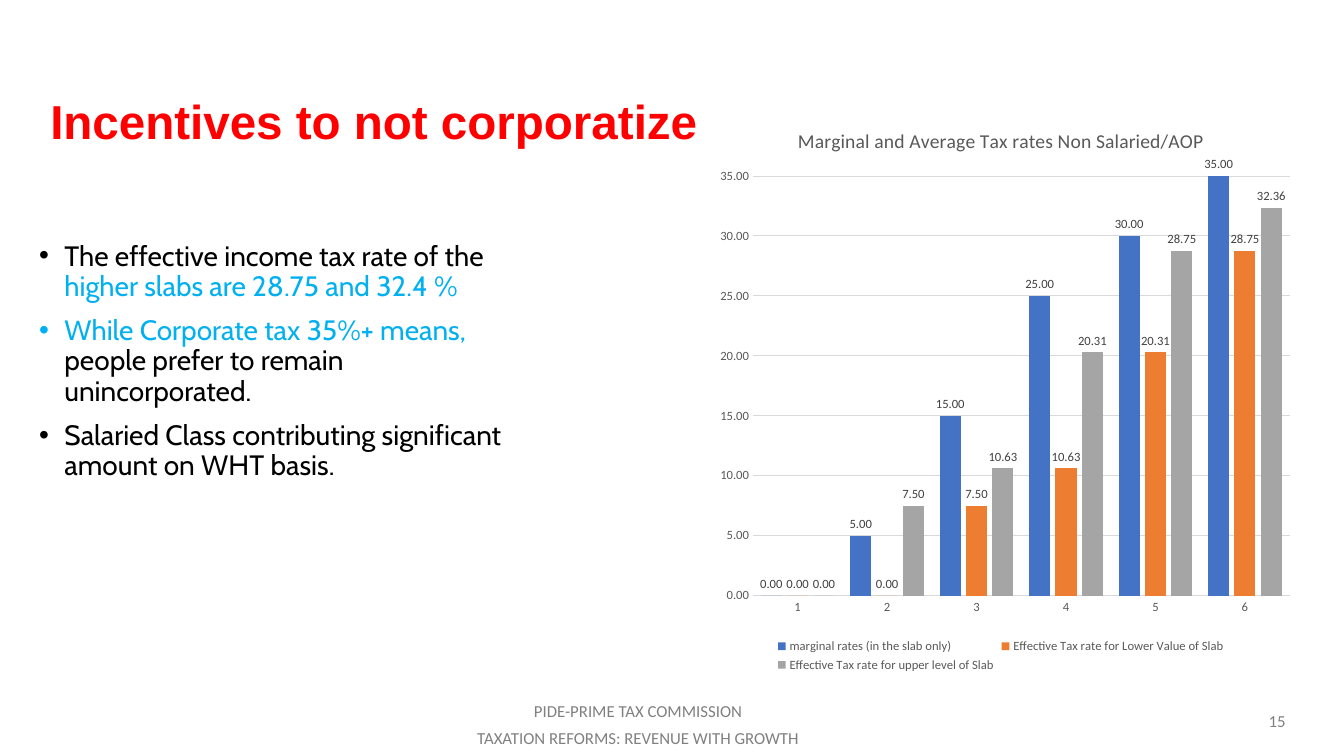
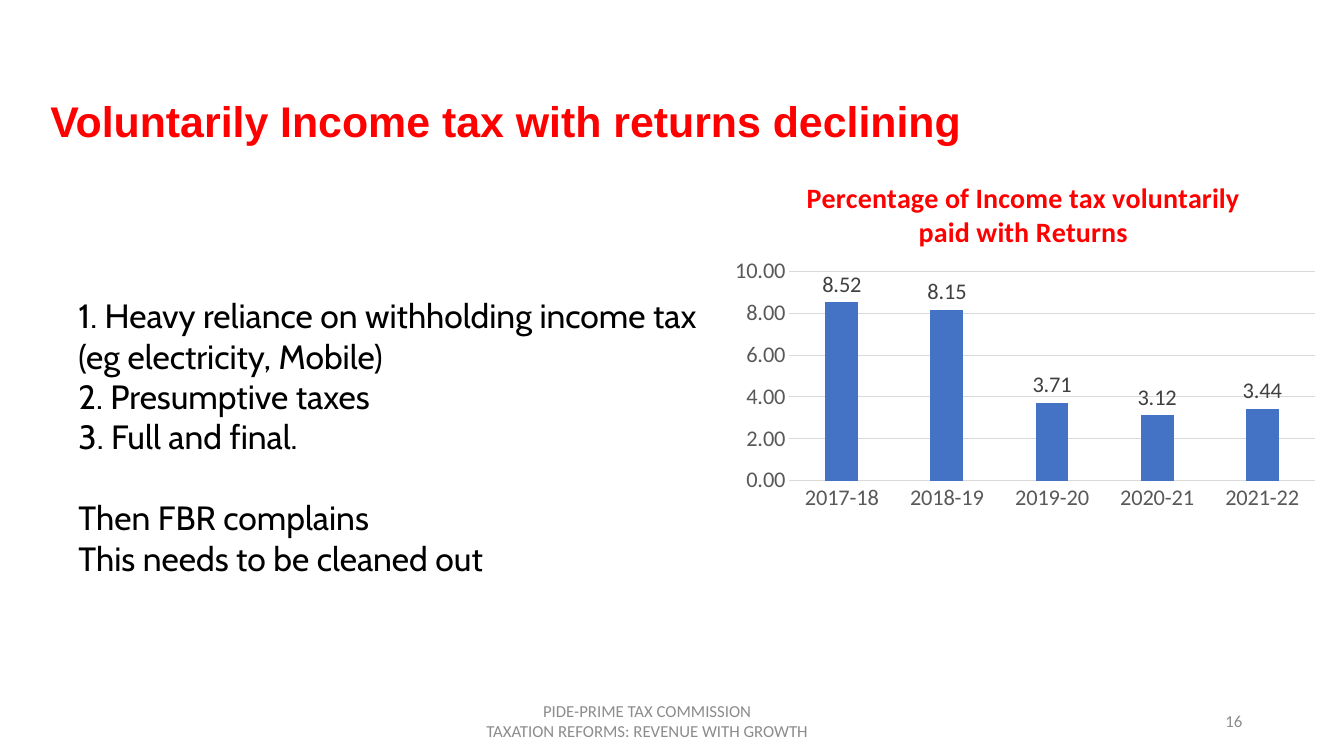
from dataclasses import dataclass
from typing import Any, Optional

from lxml import etree
from pptx import Presentation
from pptx.chart.data import CategoryChartData
from pptx.dml.color import RGBColor
from pptx.enum.chart import XL_CHART_TYPE, XL_LABEL_POSITION, XL_LEGEND_POSITION, XL_TICK_MARK
from pptx.enum.text import MSO_ANCHOR, PP_ALIGN
from pptx.oxml.ns import qn
from pptx.util import Inches, Pt

RED = RGBColor(0xFF, 0x00, 0x00)
BLACK = RGBColor(0x00, 0x00, 0x00)
SKY = RGBColor(0x00, 0xB0, 0xF0)
GREY = RGBColor(0x80, 0x80, 0x80)
LIGHT_GREY = RGBColor(0x8C, 0x8C, 0x8C)
AXIS_TEXT = RGBColor(0x59, 0x59, 0x59)
LABEL_TEXT = RGBColor(0x40, 0x40, 0x40)
GRID = RGBColor(0xD9, 0xD9, 0xD9)
BLUE = RGBColor(0x44, 0x72, 0xC4)
ORANGE = RGBColor(0xED, 0x7D, 0x31)
SILVER = RGBColor(0xA5, 0xA5, 0xA5)

TITLE_FONT, BODY_FONT, CHART_FONT = "Arial", "Cabin", "Calibri"
NUMBER_FORMAT = "0.00"
FOOTER = ("PIDE-PRIME TAX COMMISSION", "TAXATION REFORMS: REVENUE WITH GROWTH")

Box = tuple[float, float, float, float]


@dataclass(frozen=True)
class TextStyle:
    size: float
    color: RGBColor
    name: str
    bold: bool = False


@dataclass(frozen=True)
class Run:
    text: str
    color: Optional[RGBColor] = None


@dataclass(frozen=True)
class Series:
    name: str
    values: tuple[float, ...]
    color: RGBColor


@dataclass(frozen=True)
class ColumnChart:
    box: Box
    title: str
    title_style: TextStyle
    title_at: tuple[float, float]
    plot_area: Box
    categories: tuple[str, ...]
    series: tuple[Series, ...]
    text_size: int
    gap: int
    overlap: int
    top: float
    step: float
    legend: bool = False


def set_values(obj: Any, values: dict[str, Any]) -> None:
    for name, value in values.items():
        setattr(obj, name, value)


def style_font(font: Any, style: TextStyle) -> None:
    set_values(font, {"size": Pt(style.size), "name": style.name, "bold": style.bold})
    font.color.rgb = style.color


def add_text(s: Any, box: Box, paragraphs: list[tuple[Run, ...]], style: TextStyle,
             frame: Optional[dict[str, Any]] = None,
             para: Optional[dict[str, Any]] = None) -> list[Any]:
    """Add a wrapped text box and return its paragraphs."""
    tf = s.shapes.add_textbox(*map(Inches, box)).text_frame
    set_values(tf, {"word_wrap": True, **(frame or {})})
    for i, runs in enumerate(paragraphs):
        p = tf.add_paragraph() if i else tf.paragraphs[0]
        set_values(p, para or {})
        for run in runs:
            r = p.add_run()
            r.text = run.text
            style_font(r.font, style)
            if run.color is not None:
                r.font.color.rgb = run.color
    return list(tf.paragraphs)


def indent(p: Any, left: float, first: float = 0, bullet: str = "") -> None:
    pPr = p._p.get_or_add_pPr()
    pPr.set("marL", str(Inches(left)))
    pPr.set("indent", str(Inches(first)))
    if bullet:
        etree.SubElement(pPr, qn("a:buFont"), typeface="Arial")
        etree.SubElement(pPr, qn("a:buChar"), char=bullet)


def add_title(s: Any, text: str, width: float, size: float) -> None:
    add_text(s, (0.4, 0.3, width, 1.36), [(Run(text),)],
             TextStyle(size, RED, TITLE_FONT, True),
             {"vertical_anchor": MSO_ANCHOR.MIDDLE, "margin_top": Inches(0.55)},
             {"line_spacing": 0.9})


def add_footer(s: Any, number: int, footer_box: Box, number_box: Box, color: RGBColor,
               para: Optional[dict[str, Any]] = None) -> None:
    style = TextStyle(12, color, CHART_FONT)
    frame = {"vertical_anchor": MSO_ANCHOR.MIDDLE}
    add_text(s, footer_box, [(Run(line),) for line in FOOTER], style, frame,
             {"alignment": PP_ALIGN.CENTER, **(para or {})})
    add_text(s, number_box, [(Run(str(number)),)], style, frame,
             {"alignment": PP_ALIGN.RIGHT, **(para or {}), "line_spacing": 1.0})


def set_layout(parent: Any, **fractions: float) -> None:
    """Place a chart part by fractions of the chart size."""
    layout = parent.find(qn("c:layout"))
    if layout is None:
        layout = etree.Element(qn("c:layout"))
        tx = parent.find(qn("c:tx"))
        parent.insert(0 if tx is None else 1, layout)
    manual = etree.SubElement(layout, qn("c:manualLayout"))
    if "w" in fractions:
        etree.SubElement(manual, qn("c:layoutTarget"), val="inner")
    for mode in ("xMode", "yMode"):
        etree.SubElement(manual, qn(f"c:{mode}"), val="edge")
    for name, value in fractions.items():
        etree.SubElement(manual, qn(f"c:{name}"), val=str(value))


def style_line(line: Any) -> None:
    line.color.rgb = GRID
    line.width = Pt(0.75)


def add_column_chart(s: Any, spec_: ColumnChart) -> None:
    data = CategoryChartData(number_format=NUMBER_FORMAT)
    data.categories = spec_.categories
    for series in spec_.series:
        data.add_series(series.name, series.values)
    chart = s.shapes.add_chart(XL_CHART_TYPE.COLUMN_CLUSTERED,
                               *map(Inches, spec_.box), data).chart
    axis_style = TextStyle(spec_.text_size, AXIS_TEXT, CHART_FONT)
    style_font(chart.font, axis_style)

    chart.has_title = True
    p = chart.chart_title.text_frame.paragraphs[0]
    r = p.add_run()
    r.text = spec_.title
    style_font(r.font, spec_.title_style)
    set_layout(chart.element.find(".//" + qn("c:title")),
               **dict(zip("xy", spec_.title_at)))
    set_layout(chart.element.find(".//" + qn("c:plotArea")),
               **dict(zip("xywh", spec_.plot_area)))

    chart.has_legend = spec_.legend
    if spec_.legend:
        set_values(chart.legend, {"position": XL_LEGEND_POSITION.BOTTOM,
                                  "include_in_layout": False})
        style_font(chart.legend.font, axis_style)

    for axis in (chart.category_axis, chart.value_axis):
        set_values(axis, {"major_tick_mark": XL_TICK_MARK.NONE,
                          "minor_tick_mark": XL_TICK_MARK.NONE})
        style_font(axis.tick_labels.font, axis_style)
    style_line(chart.category_axis.format.line)
    value_axis = chart.value_axis
    set_values(value_axis, {"minimum_scale": 0, "maximum_scale": spec_.top,
                            "major_unit": spec_.step, "has_major_gridlines": True})
    value_axis.format.line.fill.background()
    style_line(value_axis.major_gridlines.format.line)
    number_format = {"number_format": NUMBER_FORMAT, "number_format_is_linked": False}
    set_values(value_axis.tick_labels, number_format)

    plot = chart.plots[0]
    set_values(plot, {"gap_width": spec_.gap, "overlap": spec_.overlap,
                      "vary_by_categories": False})
    for column, series in zip(plot.series, spec_.series):
        column.format.fill.solid()
        column.format.fill.fore_color.rgb = series.color
        labels = column.data_labels
        set_values(labels, {"show_value": True, **number_format,
                            "position": XL_LABEL_POSITION.OUTSIDE_END})
        style_font(labels.font, TextStyle(spec_.text_size, LABEL_TEXT, CHART_FONT))


def add_incentives_slide(prs: Any) -> None:
    s = prs.slides.add_slide(prs.slide_layouts[6])
    add_title(s, "Incentives to not corporatize", 8.05, 34)
    bullets = [
        (Run("The effective income tax rate of the "),
         Run("higher slabs are 28.75 and 32.4 %", SKY)),
        (Run("While Corporate tax 35%+ means,", SKY),
         Run(" people prefer to remain unincorporated.")),
        (Run("Salaried Class contributing significant amount on WHT basis."),),
    ]
    for p in add_text(s, (0.29, 1.9, 4.95, 4.97), bullets,
                      TextStyle(20, BLACK, BODY_FONT), {"margin_top": Inches(0.5)},
                      {"line_spacing": 0.9, "space_after": Pt(10)}):
        indent(p, 0.25, -0.25, "•")
    add_footer(s, 15, (4.21, 7, 4.24, 0.4), (11.29, 6.95, 1.56, 0.4), GREY,
               {"line_spacing": 0.9, "space_after": Pt(6)})
    add_column_chart(s, ColumnChart(
        box=(7, 1, 5.85, 5.71),
        title="Marginal and Average Tax rates Non Salaried/AOP",
        title_style=TextStyle(14, AXIS_TEXT, CHART_FONT),
        title_at=(0.15, 0.04),
        plot_area=(0.08, 0.11, 0.91, 0.75),
        categories=("1", "2", "3", "4", "5", "6"),
        series=(
            Series("marginal rates (in the slab only)", (0, 5, 15, 25, 30, 35), BLUE),
            Series("Effective Tax rate for Lower Value of Slab",
                   (0, 0, 7.5, 10.63, 20.31, 28.75), ORANGE),
            Series("Effective Tax rate for upper level of Slab",
                   (0, 7.5, 10.63, 20.31, 28.75, 32.36), SILVER),
        ),
        text_size=9, gap=75, overlap=-25, top=36, step=5, legend=True))


def add_returns_slide(prs: Any) -> None:
    s = prs.slides.add_slide(prs.slide_layouts[6])
    add_title(s, "Voluntarily Income tax with returns declining", 9.69, 30.6)
    reasons = [
        "1. Heavy reliance on withholding income tax (eg electricity, Mobile)",
        "2. Presumptive taxes",
        "3. Full and final.",
    ]
    remarks = ["Then FBR complains", "This needs to be cleaned out"]
    paragraphs = add_text(s, (0.18, 2.88, 6.93, 2.93),
                          [(Run(line),) for line in reasons + remarks],
                          TextStyle(24, BLACK, BODY_FONT))
    for p in paragraphs:
        indent(p, 0.5)
    paragraphs[len(reasons)].space_before = Pt(29)
    add_footer(s, 16, (4.17, 6.95, 4.5, 0.4), (9.42, 6.95, 3, 0.4), LIGHT_GREY)
    add_column_chart(s, ColumnChart(
        box=(7.17, 1.53, 5.99, 3.64),
        title="Percentage of Income tax voluntarily paid with Returns",
        title_style=TextStyle(20, RED, CHART_FONT, True),
        title_at=(0.13, 0.05),
        plot_area=(0.11, 0.32, 0.87, 0.57),
        categories=("2017-18", "2018-19", "2019-20", "2020-21", "2021-22"),
        series=(Series("Series 1", (8.52, 8.15, 3.71, 3.12, 3.44), BLUE),),
        text_size=16, gap=219, overlap=-27, top=10, step=2))


def main() -> None:
    prs = Presentation()
    set_values(prs, {"slide_width": Inches(13.33), "slide_height": Inches(7.5)})
    add_incentives_slide(prs)
    add_returns_slide(prs)
    prs.save("out.pptx")


if __name__ == "__main__":
    main()
